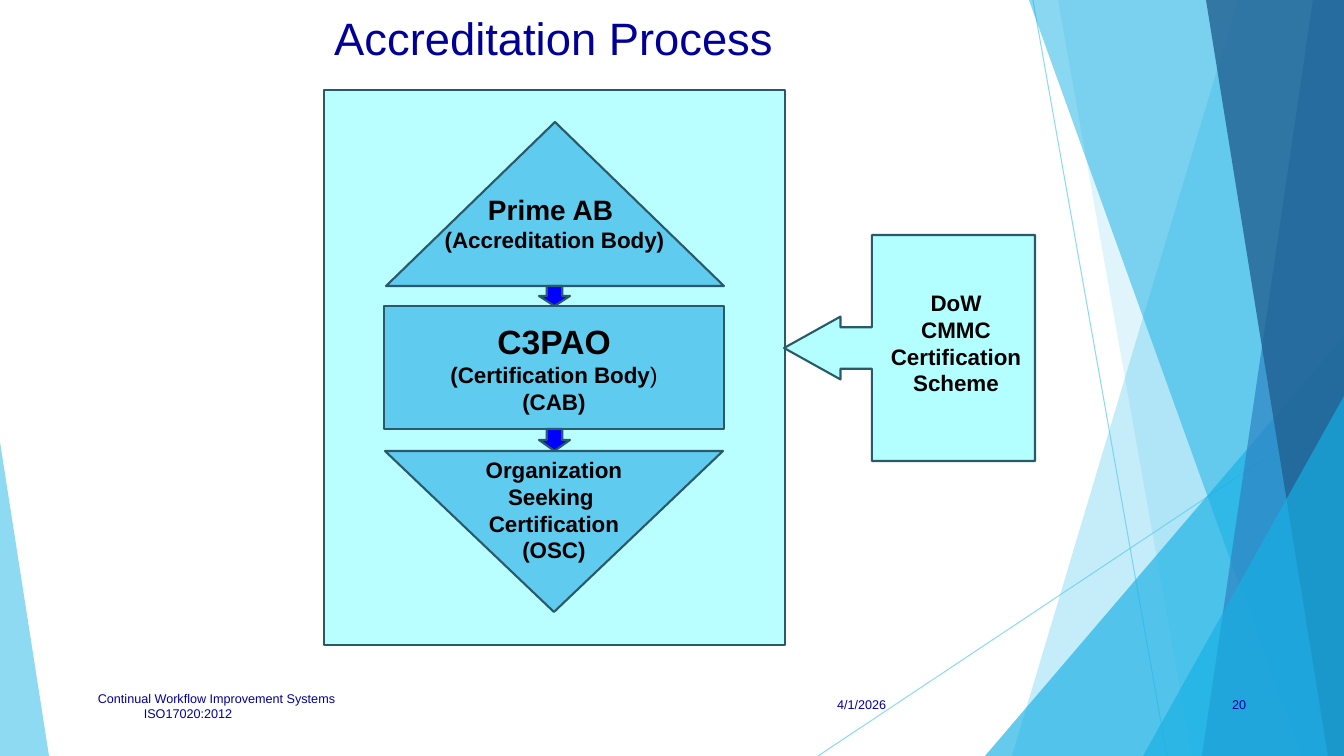
from dataclasses import dataclass

from lxml import etree
from pptx import Presentation
from pptx import util as u
from pptx.dml.color import RGBColor
from pptx.enum import shapes, text
from pptx.oxml.ns import qn

EMU_PER_PX = 12192000 / 1344
WIDTH, HEIGHT = 1344, 756
FONT = "Arial"
NAVY, BLACK, OUTLINE = "000099", "000000", "2A5969"
SKY, CYAN, BLUE = "5FCBEF", "17B0E4", "0000FF"
KIND = shapes.MSO_SHAPE
LEFT, CENTER, RIGHT = text.PP_ALIGN.LEFT, text.PP_ALIGN.CENTER, text.PP_ALIGN.RIGHT
TOP, MIDDLE = text.MSO_ANCHOR.TOP, text.MSO_ANCHOR.MIDDLE


@dataclass
class Box:
    left: int
    top: int
    width: int
    height: int


@dataclass
class Facet:
    """Band reaching from a slanted left edge to the right slide edge."""
    top_x: int
    bottom_x: int
    color: str
    alpha: int


@dataclass
class Corner:
    """Right-angled triangle; peak 0 is at its left, 1 at its right."""
    box: Box
    peak: int
    color: str
    alpha: int


@dataclass
class Line:
    text: str
    size: float = 16
    bold: bool = True
    color: str = BLACK
    plain_tail: str = ""
    indent: int = 0


@dataclass
class Block:
    kind: KIND
    box: Box
    color: str
    lines: tuple[Line, ...] = ()
    anchor: text.MSO_ANCHOR = MIDDLE
    adjustments: tuple[float, ...] = ()


@dataclass
class Label:
    box: Box
    lines: tuple[Line, ...]
    align: text.PP_ALIGN = CENTER
    anchor: text.MSO_ANCHOR = TOP


def px(value: float) -> u.Emu:
    return u.Emu(round(value * EMU_PER_PX))


def place(box: Box) -> tuple[u.Emu, ...]:
    return px(box.left), px(box.top), px(box.width), px(box.height)


def set_fill(fill, color: str, alpha: int = 100) -> None:
    fill.solid()
    fill.fore_color.rgb = RGBColor.from_string(color)
    if alpha < 100:
        color_node = fill._xPr.find(qn("a:solidFill"))[0]
        etree.SubElement(color_node, qn("a:alpha"), val=str(alpha * 1000))


def write(frame, lines: tuple[Line, ...], align, anchor) -> None:
    frame.word_wrap = True
    frame.vertical_anchor = anchor
    frame.text = "\n".join(line.text for line in lines)
    for paragraph, line in zip(frame.paragraphs, lines):
        paragraph.alignment = align
        if line.indent:
            paragraph._p.get_or_add_pPr().set("marL", str(px(line.indent)))
        if line.plain_tail:
            paragraph.add_run().text = line.plain_tail
        for index, run in enumerate(paragraph.runs):
            run.font.name = FONT
            run.font.size = u.Pt(line.size)
            run.font.bold = line.bold and index == 0
            run.font.color.rgb = RGBColor.from_string(line.color)


def draw_ray(slide, start: tuple[int, int], end: tuple[int, int]) -> None:
    ray = slide.shapes.add_connector(
        shapes.MSO_CONNECTOR.STRAIGHT, *map(px, start + end))
    ray.line.width = u.Pt(0.75)
    set_fill(ray.line.fill, SKY, 70)
    etree.SubElement(ray._element.spPr, qn("a:effectLst"))


def draw_backdrop(slide, part: Facet | Corner) -> None:
    if isinstance(part, Facet):
        builder = slide.shapes.build_freeform(part.top_x, 0, scale=EMU_PER_PX)
        builder.add_line_segments(
            [(WIDTH, 0), (WIDTH, HEIGHT), (part.bottom_x, HEIGHT)])
        shape = builder.convert_to_shape()
    else:
        shape = slide.shapes.add_shape(KIND.ISOSCELES_TRIANGLE, *place(part.box))
        shape.adjustments[0] = part.peak
    shape.shadow.inherit = False
    shape.line.fill.background()
    set_fill(shape.fill, part.color, part.alpha)


def draw_block(slide, block: Block) -> None:
    shape = slide.shapes.add_shape(block.kind, *place(block.box))
    shape.shadow.inherit = False
    set_fill(shape.fill, block.color)
    set_fill(shape.line.fill, OUTLINE)
    shape.line.width = u.Pt(1.5)
    for index, value in enumerate(block.adjustments):
        shape.adjustments[index] = value
    if block.lines:
        write(shape.text_frame, block.lines, CENTER, block.anchor)


def draw_label(slide, label: Label) -> None:
    shape = slide.shapes.add_textbox(*place(label.box))
    write(shape.text_frame, label.lines, label.align, label.anchor)


def footer(words: str, indent: int = 0) -> Line:
    return Line(words, 9, False, NAVY, indent=indent)


RAYS = [((1033, 0), (1167, HEIGHT)), ((WIDTH, 406), (818, HEIGHT))]
BACKDROP = [
    Facet(1238, 1012, SKY, 36),
    Facet(1058, 1192, SKY, 20),
    Corner(Box(985, 336, 359, 420), 1, CYAN, 66),
    Facet(1029, 1301, CYAN, 50),
    Facet(1313, 1202, "2E83C3", 70),
    Facet(1206, 1328, "226292", 80),
    Corner(Box(1143, 396, 201, 360), 1, CYAN, 66),
    Corner(Box(0, 442, 49, 314), 0, SKY, 70),
]
BLOCKS = [
    Block(KIND.RECTANGLE, Box(324, 90, 461, 555), "B9FFFF"),
    Block(KIND.ISOSCELES_TRIANGLE, Box(386, 122, 338, 164), SKY),
    Block(KIND.RECTANGLE, Box(384, 306, 340, 123), SKY, (
        Line("C3PAO", 24),
        Line("(Certification Body", plain_tail=")"),
        Line("(CAB)"))),
    Block(KIND.FLOWCHART_MERGE, Box(385, 451, 338, 161), SKY, (
        Line("Organization"), Line("Seeking "),
        Line("Certification"), Line("(OSC)")), TOP),
    Block(KIND.DOWN_ARROW, Box(539, 286, 31, 20), BLUE),
    Block(KIND.DOWN_ARROW, Box(539, 429, 31, 22), BLUE),
    Block(KIND.LEFT_ARROW_CALLOUT, Box(784, 235, 251, 226), "B3FFFF",
          adjustments=(0.184, 0.139, 0.25, 0.65)),
]
LABELS = [
    Label(Box(80, 5, 947, 62), (Line("Accreditation Process", 32.4, False, NAVY),)),
    Label(Box(417, 188, 275, 72),
          (Line("Prime AB ", 20), Line("(Accreditation Body)"))),
    Label(Box(877, 284, 158, 119),
          (Line("DoW"), Line("CMMC"), Line("Certification Scheme"))),
    Label(Box(88, 687, 282, 38),
          (footer("Continual Workflow Improvement Systems"),
           footer("ISO17020:2012", indent=46)), LEFT, MIDDLE),
    Label(Box(795, 684, 101, 40), (footer("4/1/2026"),), RIGHT, MIDDLE),
    Label(Box(1180, 684, 76, 40), (footer("20"),), RIGHT, MIDDLE),
]


def main() -> None:
    presentation = Presentation()
    presentation.slide_width, presentation.slide_height = px(WIDTH), px(HEIGHT)
    slide = presentation.slides.add_slide(presentation.slide_layouts[6])
    # Faceted backdrop
    for start, end in RAYS:
        draw_ray(slide, start, end)
    for part in BACKDROP:
        draw_backdrop(slide, part)
    # Process diagram
    for block in BLOCKS:
        draw_block(slide, block)
    # Title, captions and footer
    for label in LABELS:
        draw_label(slide, label)
    presentation.save("out.pptx")


if __name__ == "__main__":
    main()
